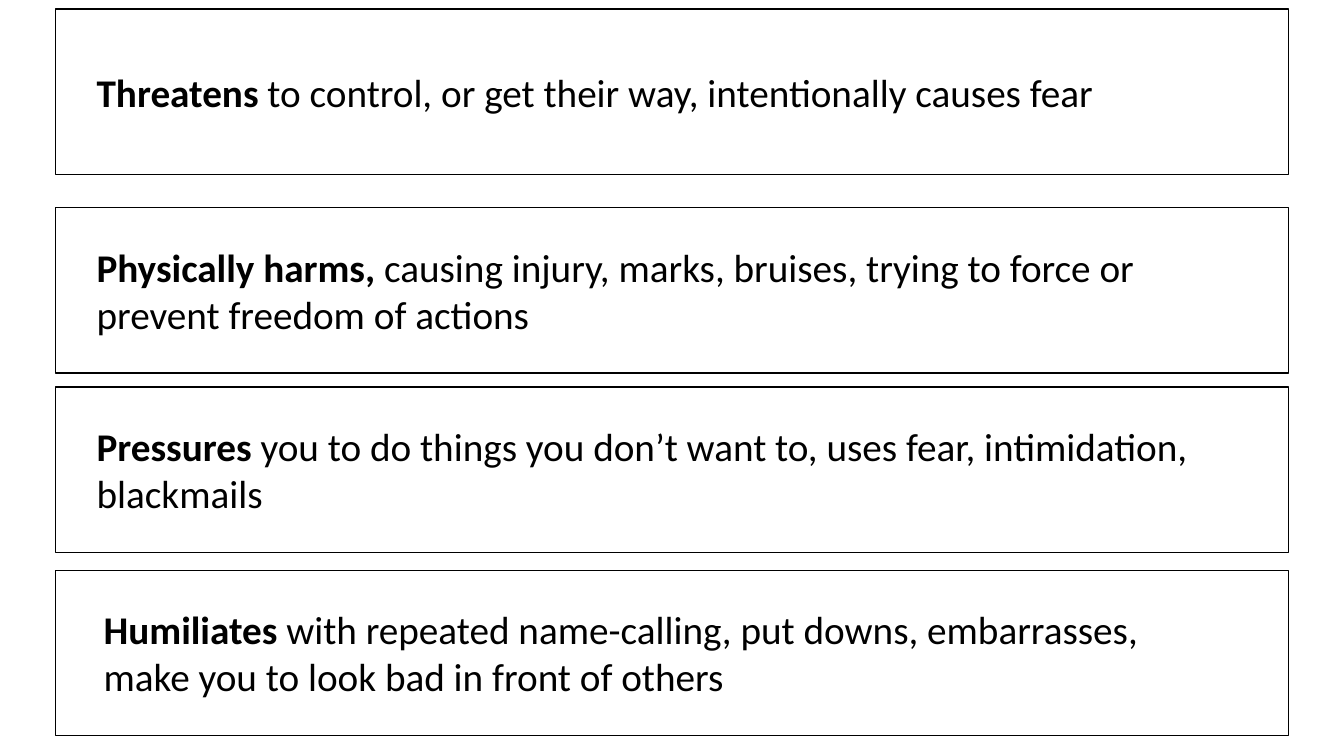
from pptx import Presentation
from pptx.dml.color import RGBColor
from pptx.enum.shapes import MSO_SHAPE as Shape
from pptx.enum.text import MSO_AUTO_SIZE as AutoSize
from pptx.util import Inches, Pt

COLOURS = {"paper": "FFFFFF", "ink": "000000"}
FONT = "Calibri"
BEHAVIOURS = [
    {"top": 0.09, "text_left": 0.86, "lines": 1, "lead": "Threatens ",
     "rest": "to control, or get their way, intentionally causes fear"},
    {"top": 2.06, "text_left": 0.86, "lines": 2, "lead": "Physically harms,",
     "rest": " causing injury, marks, bruises, trying to force or prevent freedom of actions"},
    {"top": 3.84, "text_left": 0.86, "lines": 2, "lead": "Pressures ",
     "rest": "you to do things you don’t want to, uses fear, intimidation, blackmails"},
    {"top": 5.66, "text_left": 0.93, "lines": 2, "lead": "Humiliates ",
     "rest": "with repeated name-calling, put downs, embarrasses, make you to look bad in front of others"},
]
CARD_LEFT, CARD_WIDTH, CARD_HEIGHT = 0.55, 12.23, 1.64
TEXT_WIDTH, LINE_HEIGHT, TEXT_PADDING = 11.15, 0.47, 0.1


def colour(name):
    return RGBColor.from_string(COLOURS[name])


def add_card(page, top):
    card = page.shapes.add_shape(
        Shape.RECTANGLE, Inches(CARD_LEFT), Inches(top), Inches(CARD_WIDTH), Inches(CARD_HEIGHT))
    card.shadow.inherit = False
    card.fill.solid()
    card.fill.fore_color.rgb = colour("paper")
    card.line.color.rgb = colour("ink")
    card.line.width = Pt(1)


def add_description(page, behaviour):
    height = behaviour["lines"] * LINE_HEIGHT + TEXT_PADDING
    top = behaviour["top"] + (CARD_HEIGHT - height) / 2
    box = page.shapes.add_textbox(
        Inches(behaviour["text_left"]), Inches(top), Inches(TEXT_WIDTH), Inches(height))
    frame = box.text_frame
    frame.word_wrap = True
    frame.auto_size = AutoSize.SHAPE_TO_FIT_TEXT
    para = frame.paragraphs[0]
    for words, bold in ((behaviour["lead"], True), (behaviour["rest"], False)):
        span = para.add_run()
        span.text = words
        span.font.name = FONT
        span.font.size = Pt(28)
        span.font.bold = bold
        span.font.color.rgb = colour("ink")


def main():
    deck = Presentation()
    deck.slide_width, deck.slide_height = Inches(13.33), Inches(7.5)
    page = deck.slides.add_slide(deck.slide_layouts[6])
    page.background.fill.solid()
    page.background.fill.fore_color.rgb = colour("paper")
    for behaviour in BEHAVIOURS:
        add_card(page, behaviour["top"])
    for behaviour in BEHAVIOURS:
        add_description(page, behaviour)
    deck.save("out.pptx")


if __name__ == "__main__":
    main()
